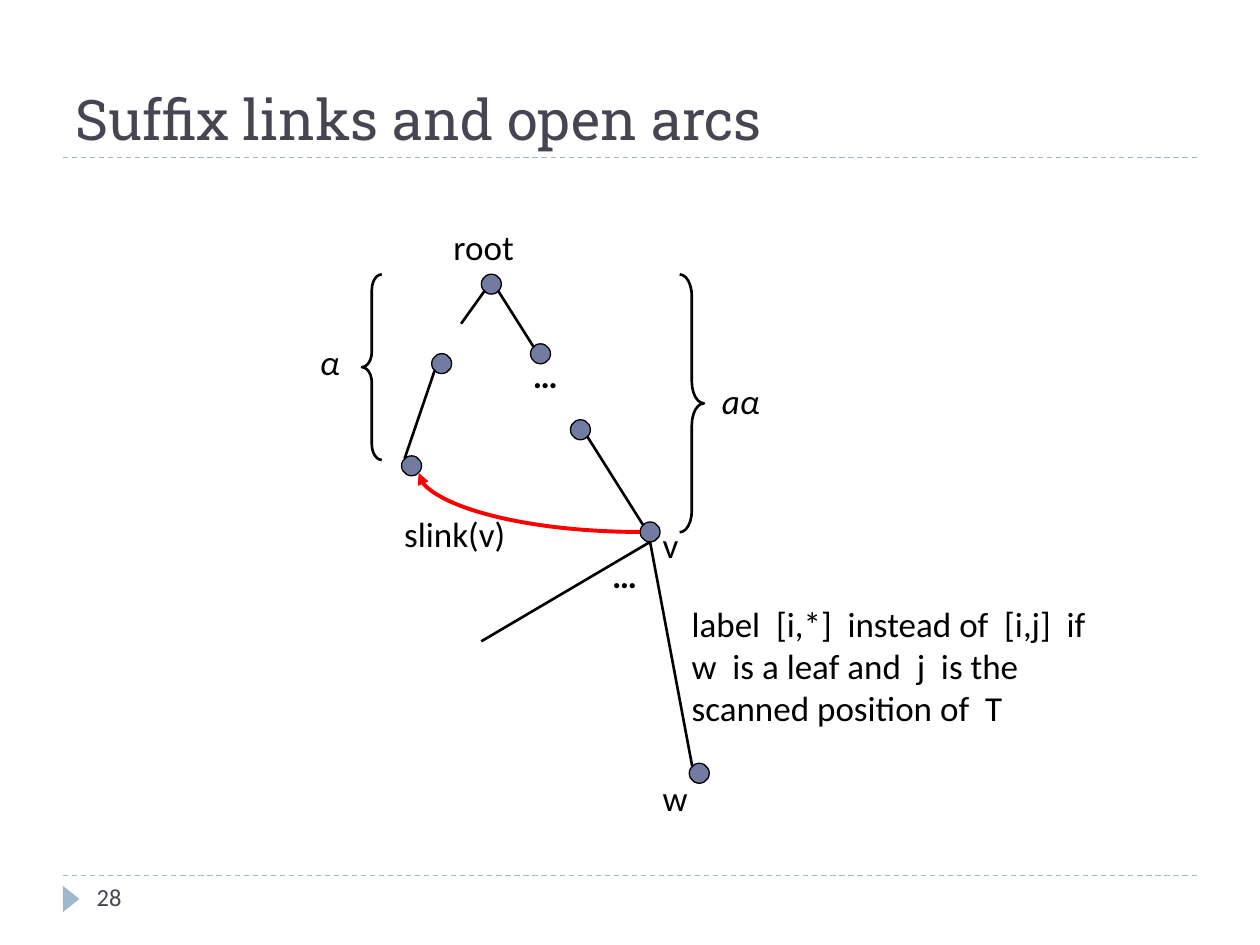
import math
from dataclasses import dataclass

import pptx
import pptx.dml.color
import pptx.enum.dml
import pptx.enum.shapes
import pptx.enum.text
import pptx.oxml.ns
import pptx.oxml.xmlchemy
import pptx.util
from lxml import etree

Pt = pptx.util.Pt
SHAPE = pptx.enum.shapes.MSO_SHAPE
CONNECTOR = pptx.enum.shapes.MSO_CONNECTOR
ANCHOR = pptx.enum.text.MSO_ANCHOR
qn = pptx.oxml.ns.qn


@dataclass(frozen=True)
class Theme:
    """Colours, fonts and sizes of the slide."""
    ink: str = "000000"
    heading: str = "464653"
    accent: str = "9FB8CD"
    node: str = "727CA3"
    link: str = "FF0000"
    title_font: str = "Roboto Slab"
    body_font: str = "Calibri"
    title_size: float = 32
    label_size: float = 20
    number_size: float = 14
    node_size: float = 11.4
    thin: float = 0.75
    edge: float = 1.5
    bold_edge: float = 2.25


THEME = Theme()


def rgb(colour):
    """Return a colour object for a hex string."""
    return pptx.dml.color.RGBColor.from_string(colour)


def add_text(slide, box, wording, size=THEME.label_size, colour=THEME.ink,
             typeface=THEME.body_font, anchor=ANCHOR.TOP, bold=False, italic=False):
    """Add a wrapped text box at left, top, width, height."""
    frame = slide.shapes.add_textbox(*map(Pt, box)).text_frame
    frame.word_wrap = True
    frame.vertical_anchor = anchor
    paragraph = frame.paragraphs[0]
    paragraph.text = wording
    font = paragraph.font
    font.name, font.size, font.bold, font.italic = typeface, Pt(size), bold, italic
    font.color.rgb = rgb(colour)


def add_line(slide, start, end, colour=THEME.ink, width=THEME.edge, kind=CONNECTOR.STRAIGHT):
    """Add a connector without a shadow between two points."""
    line = slide.shapes.add_connector(kind, *map(Pt, (*start, *end)))
    line.line.color.rgb = rgb(colour)
    line.line.width = Pt(width)
    etree.SubElement(line._element.spPr, qn("a:effectLst"))
    return line


def add_rule(slide, y):
    """Add a dashed rule across the slide."""
    rule = add_line(slide, (36, y), (684, y), THEME.accent, THEME.thin)
    rule.line.dash_style = pptx.enum.dml.MSO_LINE.DASH


def add_suffix_link(slide, start, end):
    """Add a curved arrow that leaves its start horizontally."""
    link = add_line(slide, start, end, THEME.link, THEME.bold_edge, CONNECTOR.CURVE)
    link._element.spPr.find(qn("a:prstGeom")).set("prst", "curvedConnector2")
    etree.SubElement(link.line._get_or_add_ln(), qn("a:tailEnd"), type="triangle")


def add_shape(slide, preset, box, fill=None, outline=None, width=THEME.edge):
    """Add a preset shape with an optional fill and outline."""
    shape = slide.shapes.add_shape(preset, *map(Pt, box))
    shape.shadow.inherit = False
    if fill:
        shape.fill.solid()
        shape.fill.fore_color.rgb = rgb(fill)
    else:
        shape.fill.background()
    if outline:
        shape.line.color.rgb = rgb(outline)
        shape.line.width = Pt(width)
    else:
        shape.line.fill.background()
    return shape


def add_node(slide, centre):
    """Add a tree node around its centre."""
    x, y = centre
    size = THEME.node_size
    add_shape(slide, SHAPE.OVAL, (x - size / 2, y - size / 2, size, size),
              THEME.node, THEME.ink, THEME.thin)


def add_brace(slide, preset, box, curl):
    """Add a depth brace with the given curl."""
    add_shape(slide, preset, box, outline=THEME.ink).adjustments[0] = curl


def rim(centre, degrees):
    """Return the point on a node's rim, clockwise from the right."""
    radius, angle = THEME.node_size / 2, math.radians(degrees)
    return centre[0] + radius * math.cos(angle), centre[1] + radius * math.sin(angle)


def add_frame(slide):
    """Add the title, rules and slide number."""
    add_rule(slide, 500.4)
    add_rule(slide, 90)
    add_shape(slide, SHAPE.ISOSCELES_TRIANGLE, (33.1, 509, 15.1, 9.4), THEME.accent).rotation = 90
    add_text(slide, (48.2, 500.4, 156, 28.8), "28", THEME.number_size, THEME.heading)
    add_text(slide, (36, 18, 648, 72), "Suffix links and open arcs", THEME.title_size,
             THEME.heading, THEME.title_font, ANCHOR.BOTTOM)


def add_tree(slide):
    """Add the suffix tree with its suffix link."""
    root, left, target = (280.8, 162.4), (252.4, 207.8), (235.2, 266.2)
    right, parent, v, w = (308.9, 202.2), (331.7, 245.6), (371.5, 304), (399.6, 441.9)
    for centre in (root, left, target, right, parent, v, w):
        add_node(slide, centre)
    upper_left, lower_left, lower_right, bottom = 225, 135, 45, 90
    edges = (
        (rim(root, lower_left), (263.5, 185)),
        (rim(root, lower_right), rim(right, upper_left)),
        (rim(left, lower_left), rim(target, upper_left)),
        (rim(parent, lower_right), rim(v, upper_left)),
        (rim(v, bottom), (275, 366.5)),
        (rim(v, bottom), rim(w, upper_left)),
    )
    for start, end in edges:
        add_line(slide, start, end)
    add_suffix_link(slide, rim(v, 180), rim(target, lower_right))


def add_labels(slide):
    """Add the depth braces and all labels of the tree."""
    add_brace(slide, SHAPE.LEFT_BRACE, (206.8, 156.8, 11.4, 106), 0.78)
    add_brace(slide, SHAPE.RIGHT_BRACE, (388.4, 156.8, 13.9, 147.4), 0.89)
    for left, top, width, wording in (
        (252, 125.5, 73.5, "root"),
        (371.5, 295.4, 22.3, "v"),
        (371.5, 439.9, 73.5, "w"),
        (223.9, 289.4, 96.5, "slink(v)"),
    ):
        add_text(slide, (left, top, width, 31), wording)
    for left, top in ((297.4, 198.7), (342.7, 312.5)):
        add_text(slide, (left, top, 45.4, 31), "…", bold=True)
    for left, top, wording in ((175.7, 190.8, "α"), (405.4, 213.1, "aα")):
        add_text(slide, (left, top, 76.3, 31), wording, italic=True)
    add_text(slide, (388.1, 340.6, 255.6, 79.2),
             "label  [i,*]  instead of  [i,j]  if w  is a leaf and  j  is the scanned position of  T")


def main():
    """Build and save the slide."""
    deck = pptx.Presentation()
    deck.slide_width, deck.slide_height = Pt(720), Pt(540)
    slide = deck.slides.add_slide(deck.slide_layouts[6])
    add_frame(slide)
    add_tree(slide)
    add_labels(slide)
    deck.save("out.pptx")


if __name__ == "__main__":
    main()
